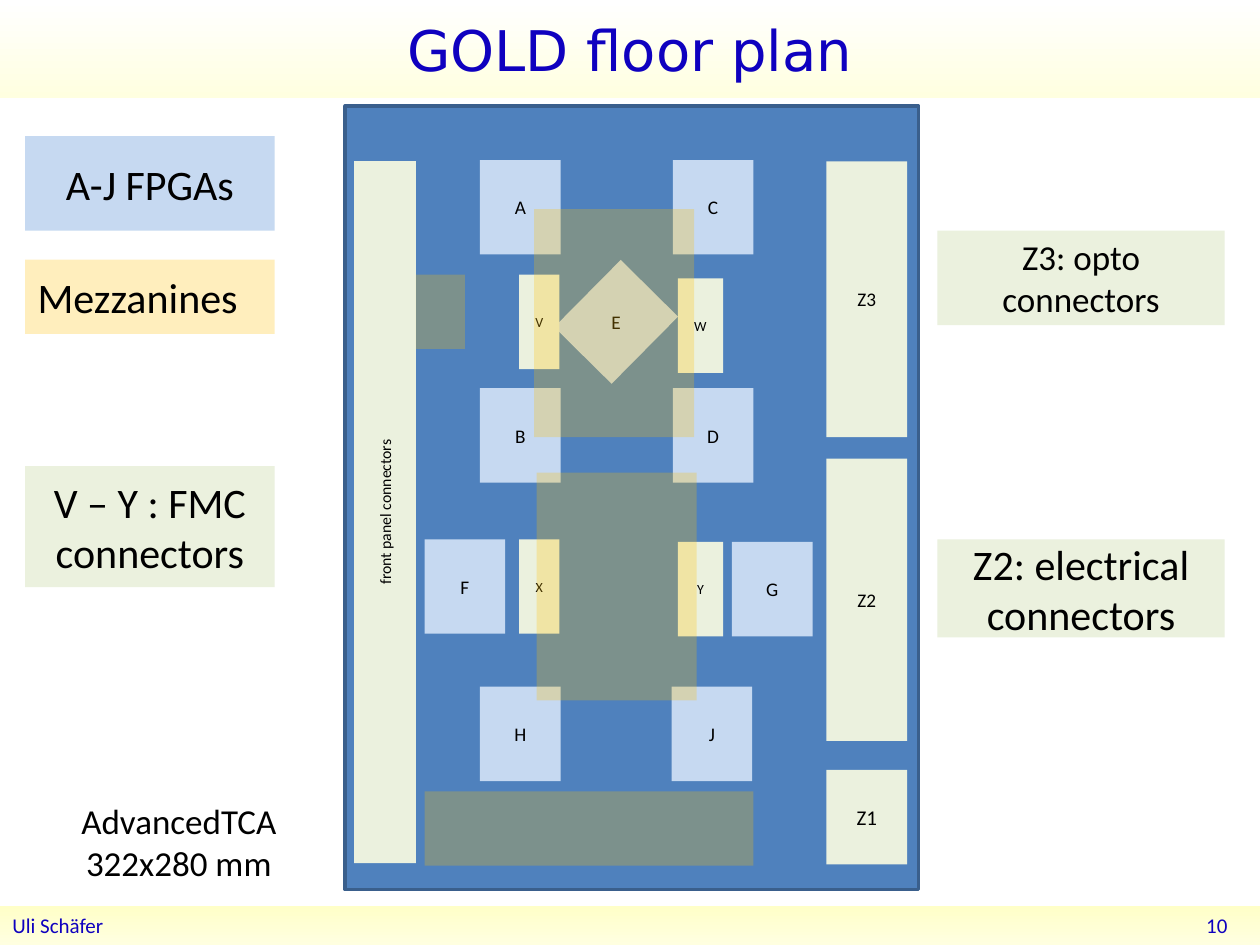
from lxml import etree
from pptx import Presentation
from pptx.dml.color import RGBColor
from pptx.enum.shapes import MSO_SHAPE
from pptx.enum.text import MSO_ANCHOR, PP_ALIGN
from pptx.oxml.ns import qn
from pptx.util import Inches, Pt

RECTANGLE = MSO_SHAPE.RECTANGLE
MIDDLE = MSO_ANCHOR.MIDDLE
LEFT, CENTER, RIGHT = PP_ALIGN.LEFT, PP_ALIGN.CENTER, PP_ALIGN.RIGHT

WHITE = RGBColor(0xFF, 0xFF, 0xFF)
BLACK = RGBColor(0x00, 0x00, 0x00)
INK_BLUE = RGBColor(0x0F, 0x01, 0xBF)
BOARD_BLUE = RGBColor(0x4F, 0x81, 0xBD)
BOARD_EDGE = RGBColor(0x3A, 0x5F, 0x8C)
FPGA_BLUE = RGBColor(0xC6, 0xD9, 0xF1)
CONNECTOR_GREEN = RGBColor(0xEB, 0xF1, 0xDE)
MEZZANINE_AMBER = RGBColor(0xFF, 0xC0, 0x00)
CREAM = RGBColor(0xFF, 0xFF, 0xE0)
YELLOW = RGBColor(0xFF, 0xFF, 0xC8)

CHIP_WIDTH, CHIP_HEIGHT = 0.64, 0.75


def write(shape, lines, size, align=CENTER, color=BLACK, font="Calibri"):
    """Write lines as paragraphs, centred vertically in the shape."""
    frame = shape.text_frame
    frame.word_wrap = True
    frame.vertical_anchor = MIDDLE
    for index, line in enumerate(lines):
        paragraph = frame.add_paragraph() if index else frame.paragraphs[0]
        paragraph.alignment = align
        run = paragraph.add_run()
        run.text = line
        run.font.size = Pt(size)
        run.font.name = font
        run.font.color.rgb = color


def add_label(slide, box, lines, size, align=CENTER, color=BLACK):
    """Add a text box without a fill."""
    label = slide.shapes.add_textbox(*map(Inches, box))
    write(label, lines, size, align, color)


def add_block(slide, box, color, text="", size=11, align=CENTER):
    """Add a borderless rectangle with an optional caption."""
    block = slide.shapes.add_shape(RECTANGLE, *map(Inches, box))
    block.shadow.inherit = False
    block.fill.solid()
    block.fill.fore_color.rgb = color
    block.line.fill.background()
    if text:
        write(block, [text], size, align)
    return block


def add_mezzanine(slide, box, text="", size=24):
    """Add a see-through mezzanine area."""
    area = add_block(slide, box, MEZZANINE_AMBER, text, size, LEFT)
    tint = area.fill._xPr.find(qn("a:solidFill")).find(qn("a:srgbClr"))
    etree.SubElement(tint, qn("a:alpha")).set("val", "26000")


def add_band(slide, box, top_color, bottom_color):
    """Add a full-width band that fades from top to bottom."""
    band = add_block(slide, box, top_color)
    band.fill.gradient()
    band.fill.gradient_angle = 270
    for stop, color in zip(band.fill.gradient_stops, (top_color, bottom_color)):
        stop.color.rgb = color
    return band


def add_title(slide, box):
    """Add the title band."""
    band = add_band(slide, box, WHITE, CREAM)
    write(band, ["GOLD floor plan"], 32, CENTER, INK_BLUE, "DejaVu Sans")


def add_footer(slide, box):
    """Add the footer band with author and page number."""
    left, top, width, height = box
    band = add_band(slide, box, YELLOW, CREAM)
    write(band, ["Uli Schäfer"], 12, LEFT, INK_BLUE)
    add_label(slide, (left + width - 2.27, top, 2.11, height), ["10"], 12, RIGHT, INK_BLUE)


def add_board(slide, box):
    """Draw the board with its FPGAs, connectors and mezzanines."""
    left, top, width, height = box
    board = add_block(slide, box, BOARD_BLUE)
    board.line.color.rgb = BOARD_EDGE
    board.line.width = Pt(2)

    def place(x, y, part_width, part_height):
        return left + x, top + y, part_width, part_height

    fpgas = [("A", 1.07, 0.43), ("C", 2.6, 0.43), ("B", 1.07, 2.24), ("D", 2.6, 2.24),
             ("F", 0.63, 3.44), ("G", 3.07, 3.46), ("H", 1.07, 4.61), ("J", 2.59, 4.61)]
    for name, x, y in fpgas:
        add_block(slide, place(x, y, CHIP_WIDTH, CHIP_HEIGHT), FPGA_BLUE, name)
    center_chip = place(1.83, 1.34, CHIP_WIDTH, CHIP_HEIGHT)
    add_block(slide, center_chip, FPGA_BLUE).rotation = 44.7
    add_label(slide, center_chip, ["E"], 11)

    for name, y, zone_height, size in [("Z1", 5.27, 0.75, 12), ("Z2", 2.8, 2.24, 11),
                                       ("Z3", 0.44, 2.19, 11)]:
        add_block(slide, place(3.82, y, CHIP_WIDTH, zone_height), CONNECTOR_GREEN, name, size)
    for name, x, y, fmc_width in [("V", 1.38, 1.34, 0.32), ("W", 2.64, 1.37, 0.36),
                                  ("X", 1.38, 3.44, 0.32), ("Y", 2.64, 3.46, 0.36)]:
        add_block(slide, place(x, y, fmc_width, CHIP_HEIGHT), CONNECTOR_GREEN, name, 8)
    front_panel = add_block(slide, place(0.07, 0.44, 0.49, 5.57), CONNECTOR_GREEN,
                            "front panel connectors", 9)
    front_panel.text_frame._txBody.bodyPr.set("vert", "vert270")

    for area in [(0.56, 1.34, 0.39, 0.59), (1.5, 0.82, 1.27, 1.81),
                 (1.52, 2.91, 1.27, 1.81), (0.63, 5.44, 2.61, 0.59)]:
        add_mezzanine(slide, place(*area))


def add_left_legend(slide, box):
    """Explain FPGAs, mezzanines, FMC connectors and the board format."""
    left, top, width, height = box
    add_block(slide, (left, top, width, 0.75), FPGA_BLUE, "A-J FPGAs", 24)
    add_mezzanine(slide, (left, top + 0.98, width, 0.59), "Mezzanines")
    add_block(slide, (left, top + 2.62, width, 0.96), CONNECTOR_GREEN,
              "V – Y : FMC connectors", 24)
    add_label(slide, (left + 0.08, top + height - 0.77, width + 0.3, 0.77),
              ["AdvancedTCA", "322x280 mm"], 20)


def add_right_legend(slide, box):
    """Explain the backplane zones."""
    left, top, width, height = box
    add_block(slide, (left, top, width, 0.75), CONNECTOR_GREEN, "Z3: opto connectors", 20)
    add_block(slide, (left, top + height - 0.78, width, 0.78), CONNECTOR_GREEN,
              "Z2: electrical connectors", 24)


def main():
    """Build and save the slide."""
    deck = Presentation()
    deck.slide_width, deck.slide_height = Inches(10), Inches(7.5)
    slide = deck.slides.add_slide(deck.slide_layouts[6])
    add_title(slide, (0, 0, 10, 0.78))
    add_footer(slide, (0, 7.19, 10, 0.31))
    add_board(slide, (2.74, 0.84, 4.55, 6.22))
    add_left_legend(slide, (0.2, 1.08, 1.98, 5.98))
    add_right_legend(slide, (7.44, 1.83, 2.28, 3.23))
    deck.save("out.pptx")


if __name__ == "__main__":
    main()
